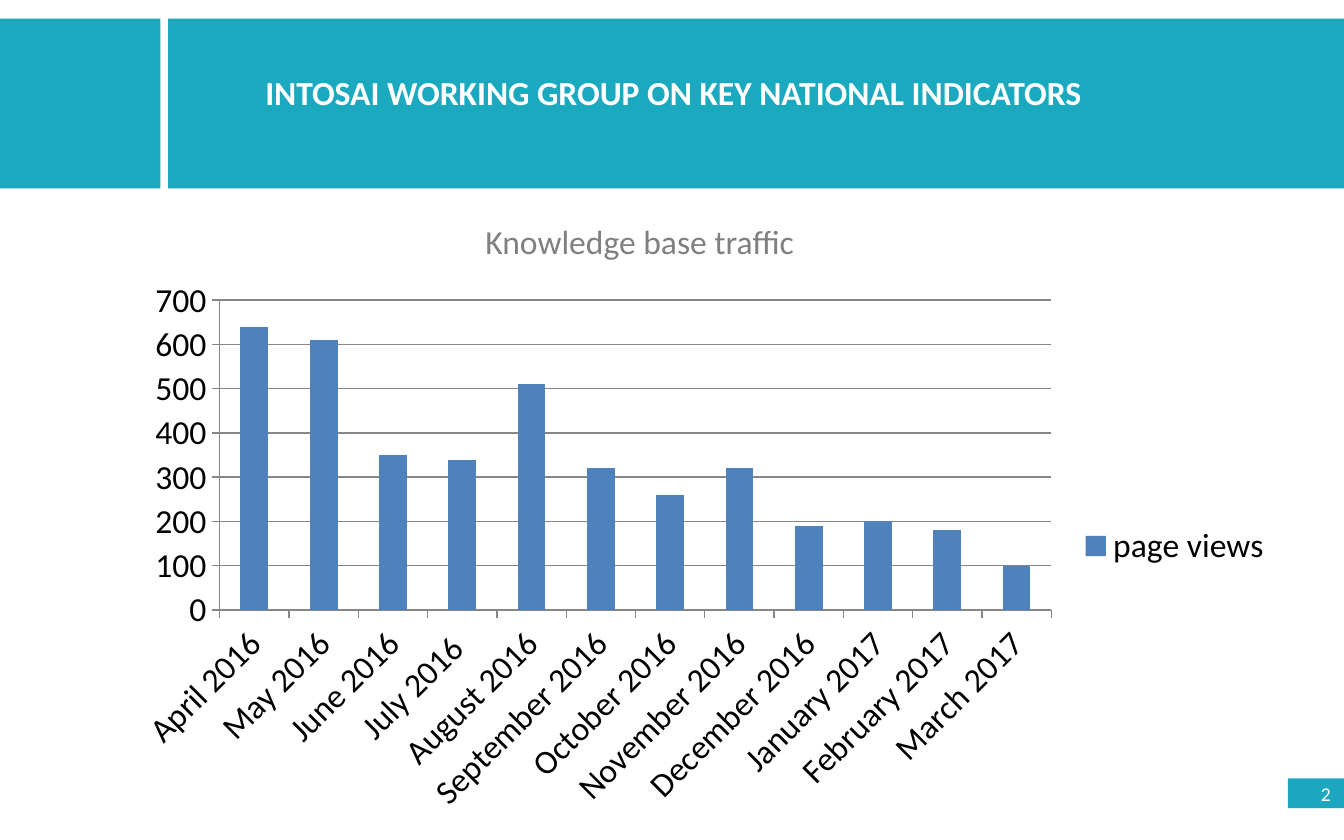
from pptx import Presentation
from pptx.chart import data
from pptx.dml import color
from pptx.enum import chart as ch, shapes, text
from pptx.util import Pt

COLORS = {"band": "1AA9BF", "badge": "1CA6C0", "white": "FFFFFF", "caption": "808080",
          "bar": "4F81BD", "line": "868686", "black": "000000"}
FONT = "Calibri"
PAGE_VIEWS = {
    "April 2016": 640, "May 2016": 610, "June 2016": 350, "July 2016 ": 340,
    "August 2016": 510, "September 2016": 320, "October 2016": 260, "November 2016": 320,
    "December 2016": 190, "January 2017": 200, "February 2017": 180, "March 2017": 100,
}


def rgb(name):
    """Return the palette colour with this name."""
    return color.RGBColor.from_string(COLORS[name])


def style(font, size, ink, bold=False):
    """Set the typeface, size, colour and weight of a font."""
    font.name, font.size, font.bold = FONT, Pt(size), bold
    font.color.rgb = rgb(ink)


def add_block(slide, left, top, width, height, fill):
    """Add a plain filled rectangle."""
    block = slide.shapes.add_shape(
        shapes.MSO_SHAPE.RECTANGLE, Pt(left), Pt(top), Pt(width), Pt(height))
    block.shadow.inherit = False
    block.fill.solid()
    block.fill.fore_color.rgb = rgb(fill)
    block.line.fill.background()
    return block


def add_label(slide, left, top, width, height, words, ink, bold=False, wrap=True):
    """Add a one-line text box."""
    label = slide.shapes.add_textbox(Pt(left), Pt(top), Pt(width), Pt(height))
    label.text_frame.word_wrap = wrap
    label.text_frame.auto_size = text.MSO_AUTO_SIZE.SHAPE_TO_FIT_TEXT
    label.text_frame.text = words
    style(label.text_frame.paragraphs[0].runs[0].font, 18, ink, bold)


def add_header(slide, left, top, width, height):
    """Place the split band and the heading on it."""
    side, gap = 86, 4
    add_block(slide, left + side + gap, top, width - side - gap, height, "band")
    add_block(slide, left, top, side, height, "band")
    add_label(slide, left + 135, top + 25, 472, 29,
              "INTOSAI WORKING GROUP ON KEY NATIONAL INDICATORS", "white", bold=True)


def add_page_number(slide, left, top, width, height, number):
    """Place the page number badge."""
    badge = add_block(slide, left, top, width, height, "badge")
    badge.text_frame.vertical_anchor = text.MSO_ANCHOR.MIDDLE
    badge.text_frame.text = str(number)
    digits = badge.text_frame.paragraphs[0]
    digits.alignment = text.PP_ALIGN.RIGHT
    style(digits.runs[0].font, 10.5, "white")


def add_traffic(slide, left, top, width, height):
    """Place the caption and the column chart of page views below it."""
    caption_height = 29
    add_label(slide, left + 190, top, 190, caption_height,
              "Knowledge base traffic", "caption", wrap=False)
    views = data.CategoryChartData()
    views.categories = list(PAGE_VIEWS)
    views.add_series("page views", list(PAGE_VIEWS.values()))
    traffic = slide.shapes.add_chart(
        ch.XL_CHART_TYPE.COLUMN_CLUSTERED, Pt(left), Pt(top + caption_height),
        Pt(width), Pt(height - caption_height), views).chart
    style(traffic.font, 18, "black")
    traffic.has_title = False
    traffic.has_legend = True
    traffic.legend.position = ch.XL_LEGEND_POSITION.RIGHT
    traffic.legend.include_in_layout = False
    columns = traffic.plots[0]
    columns.gap_width = 150
    columns.vary_by_categories = False
    columns.series[0].format.fill.solid()
    columns.series[0].format.fill.fore_color.rgb = rgb("bar")
    for axis in (traffic.category_axis, traffic.value_axis):
        axis.major_tick_mark = ch.XL_TICK_MARK.OUTSIDE
        axis.minor_tick_mark = ch.XL_TICK_MARK.NONE
        axis.format.line.color.rgb = rgb("line")
    scale = traffic.value_axis
    scale.minimum_scale, scale.maximum_scale, scale.major_unit = 0, 700, 100
    scale.has_major_gridlines = True
    scale.major_gridlines.format.line.color.rgb = rgb("line")


def main():
    """Build the slide and save it."""
    deck = Presentation()
    deck.slide_width, deck.slide_height = Pt(720), Pt(450)
    slide = deck.slides.add_slide(deck.slide_layouts[6])
    add_header(slide, 0, 10, 720, 91)
    add_page_number(slide, 690, 417, 30, 16, 2)
    add_traffic(slide, 63, 115, 626, 326)
    deck.save("out.pptx")


if __name__ == "__main__":
    main()
